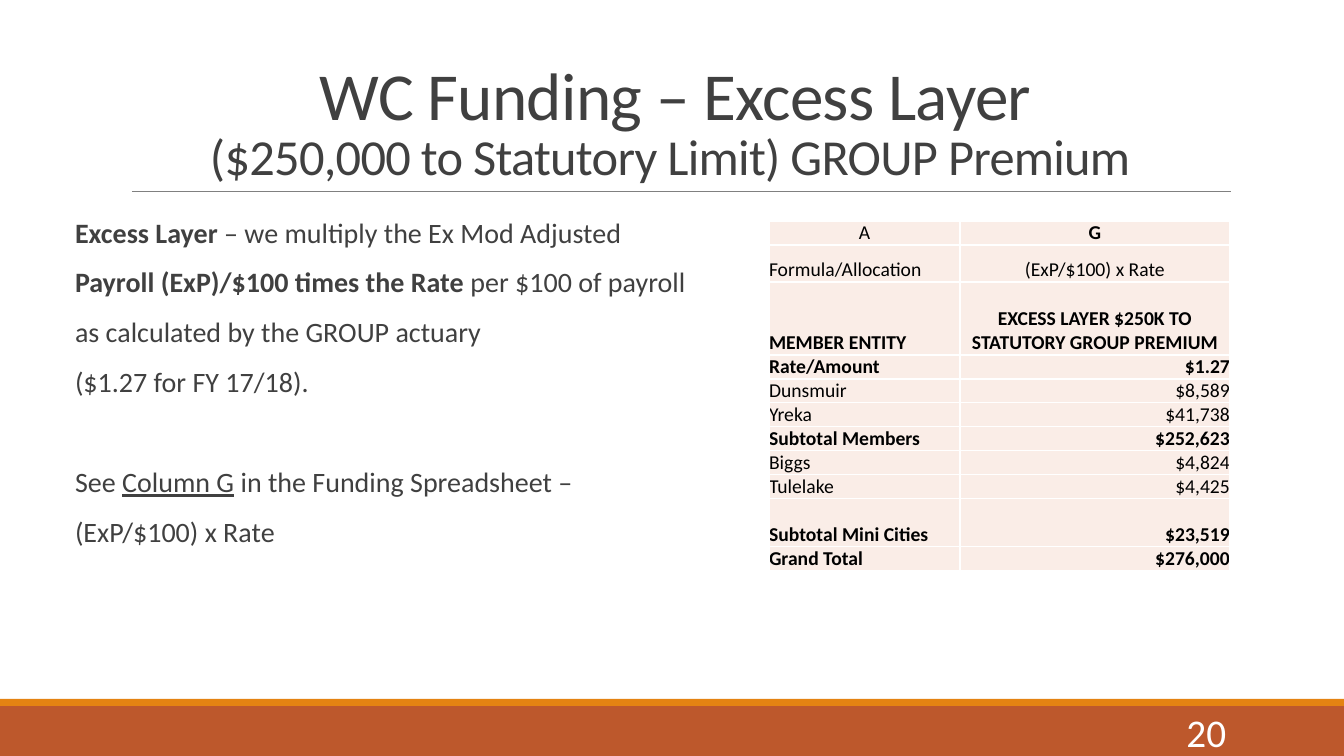
from dataclasses import dataclass

from lxml import etree
from pptx import Presentation
from pptx import util as u
from pptx.dml.color import RGBColor
from pptx.enum import shapes, text
from pptx.oxml import ns

EMU_PER_PX = 914400 / 100.8
FONT = "Calibri"
RUST = RGBColor(0xBD, 0x58, 0x2C)
ORANGE = RGBColor(0xE4, 0x83, 0x12)
GRAY = RGBColor(0x80, 0x80, 0x80)
CHARCOAL = RGBColor(0x40, 0x40, 0x40)
BLACK = RGBColor(0, 0, 0)
WHITE = RGBColor(0xFF, 0xFF, 0xFF)
BLUSH = RGBColor(0xFA, 0xED, 0xE7)
LEFT, CENTER, RIGHT = text.PP_ALIGN.LEFT, text.PP_ALIGN.CENTER, text.PP_ALIGN.RIGHT


@dataclass(frozen=True)
class Box:
    left: int
    top: int
    width: int
    height: int

    def emu(self) -> tuple[u.Emu, ...]:
        return tuple(px(n) for n in (self.left, self.top, self.width, self.height))


@dataclass(frozen=True)
class Span:
    words: str
    bold: bool = False
    underline: bool = False


@dataclass(frozen=True)
class Line:
    spans: tuple[Span, ...]
    space_before: int = 12


@dataclass(frozen=True)
class Row:
    label: str
    value: str
    height: int = 24
    bold: tuple[bool, bool] = (False, False)
    align: tuple[text.PP_ALIGN, text.PP_ALIGN] = (LEFT, RIGHT)


BOLD = (True, True)
BARS = ((Box(0, 706, 1344, 50), RUST), (Box(0, 699, 1344, 7), ORANGE))
TITLE = (("WC Funding – Excess Layer", 48),
         ("($250,000 to Statutory Limit) GROUP Premium ", 36))
BODY = (
    Line((Span("Excess Layer ", bold=True), Span("– we multiply the Ex Mod Adjusted"))),
    Line((Span("Payroll (ExP)/$100 times the Rate", bold=True),
          Span(" per $100 of payroll"))),
    Line((Span("as calculated by the GROUP actuary"),)),
    Line((Span("($1.27 for FY 17/18)."),)),
    Line((Span("See "), Span("Column G", underline=True),
          Span(" in the Funding Spreadsheet –")), space_before=48),
    Line((Span("(ExP/$100) x Rate"),)),
)
COLUMN_WIDTHS = (191, 270)
ROWS = (
    Row("A", "G", bold=(False, True), align=(CENTER, CENTER)),
    Row("Formula/Allocation", "(ExP/$100) x Rate", 37, align=(LEFT, CENTER)),
    Row("MEMBER ENTITY", "EXCESS LAYER $250K TO STATUTORY GROUP PREMIUM", 73,
        BOLD, (LEFT, CENTER)),
    Row("Rate/Amount", "$1.27", bold=BOLD),
    Row("Dunsmuir", "$8,589"),
    Row("Yreka", "$41,738"),
    Row("Subtotal Members", "$252,623", bold=BOLD),
    Row("Biggs", "$4,824"),
    Row("Tulelake", "$4,425"),
    Row("Subtotal Mini Cities", "$23,519", 48, BOLD),
    Row("Grand Total", "$276,000", bold=BOLD),
)


def px(length: int) -> u.Emu:
    return u.Emu(round(length * EMU_PER_PX))


def add_run(paragraph, span: Span, size: int, color: RGBColor):
    run = paragraph.add_run()
    run.text = span.words
    run.font.name = FONT
    run.font.size = u.Pt(size)
    run.font.bold = span.bold
    run.font.underline = span.underline
    run.font.color.rgb = color
    return run


def add_frame(slide, box: Box, anchor: text.MSO_ANCHOR):
    frame = slide.shapes.add_textbox(*box.emu()).text_frame
    frame.word_wrap = True
    frame.vertical_anchor = anchor
    return frame


def add_bar(slide, box: Box, color: RGBColor) -> None:
    shape = slide.shapes.add_shape(shapes.MSO_SHAPE.RECTANGLE, *box.emu())
    shape.shadow.inherit = False
    shape.fill.solid()
    shape.fill.fore_color.rgb = color
    shape.line.fill.background()


def add_title_rule(slide) -> None:
    rule = slide.shapes.add_connector(
        shapes.MSO_CONNECTOR.STRAIGHT, px(132), px(191), px(1231), px(191))
    rule.line.color.rgb = GRAY
    rule.line.width = u.Pt(0.5)
    etree.SubElement(rule._element.spPr, ns.qn("a:effectLst"))


def add_title(slide) -> None:
    frame = add_frame(slide, Box(121, 31, 1109, 160), text.MSO_ANCHOR.BOTTOM)
    paragraph = frame.paragraphs[0]
    paragraph.alignment = CENTER
    paragraph.line_spacing = 0.85
    for index, (words, size) in enumerate(TITLE):
        if index:
            paragraph.add_line_break()
        run = add_run(paragraph, Span(words), size, CHARCOAL)
        run.font._element.set("spc", "-50")


def add_body(slide) -> None:
    frame = add_frame(slide, Box(65, 214, 1109, 443), text.MSO_ANCHOR.TOP)
    frame.margin_left, frame.margin_right = px(10), 0
    for index, line in enumerate(BODY):
        paragraph = frame.add_paragraph() if index else frame.paragraphs[0]
        paragraph.line_spacing = 0.9
        paragraph.space_before = u.Pt(line.space_before)
        paragraph.space_after = u.Pt(2)
        for span in line.spans:
            add_run(paragraph, span, 20, CHARCOAL)


def set_borders(cell) -> None:
    properties = cell._tc.get_or_add_tcPr()
    for index, side in enumerate(("lnL", "lnR", "lnT", "lnB")):
        border = etree.Element(ns.qn(f"a:{side}"), w=str(u.Pt(1)))
        fill = etree.SubElement(border, ns.qn("a:solidFill"))
        etree.SubElement(fill, ns.qn("a:srgbClr"), val=str(WHITE))
        properties.insert(index, border)


def fill_cell(cell, span: Span, align: text.PP_ALIGN) -> None:
    cell.margin_left = cell.margin_right = cell.margin_top = cell.margin_bottom = 0
    cell.vertical_anchor = text.MSO_ANCHOR.BOTTOM
    cell.fill.solid()
    cell.fill.fore_color.rgb = BLUSH
    set_borders(cell)
    paragraph = cell.text_frame.paragraphs[0]
    paragraph.alignment = align
    add_run(paragraph, span, 14, BLACK)


def add_premium_table(slide) -> None:
    box = Box(769, 221, sum(COLUMN_WIDTHS), sum(row.height for row in ROWS))
    table = slide.shapes.add_table(len(ROWS), len(COLUMN_WIDTHS), *box.emu()).table
    table.first_row = table.horz_banding = False
    for column, width in zip(table.columns, COLUMN_WIDTHS):
        column.width = px(width)
    for index, row in enumerate(ROWS):
        table.rows[index].height = px(row.height)
        words = (row.label, row.value)
        for column, (word, bold, align) in enumerate(zip(words, row.bold, row.align)):
            fill_cell(table.cell(index, column), Span(word, bold), align)


def add_page_number(slide) -> None:
    frame = add_frame(slide, Box(1092, 712, 144, 40), text.MSO_ANCHOR.MIDDLE)
    paragraph = frame.paragraphs[0]
    paragraph.alignment = RIGHT
    add_run(paragraph, Span("20"), 28, WHITE)


def main() -> None:
    presentation = Presentation()
    presentation.slide_width, presentation.slide_height = px(1344), px(756)
    slide = presentation.slides.add_slide(presentation.slide_layouts[6])
    for box, color in BARS:
        add_bar(slide, box, color)
    add_title_rule(slide)
    add_title(slide)
    add_body(slide)
    add_premium_table(slide)
    add_page_number(slide)
    presentation.save("out.pptx")


if __name__ == "__main__":
    main()
